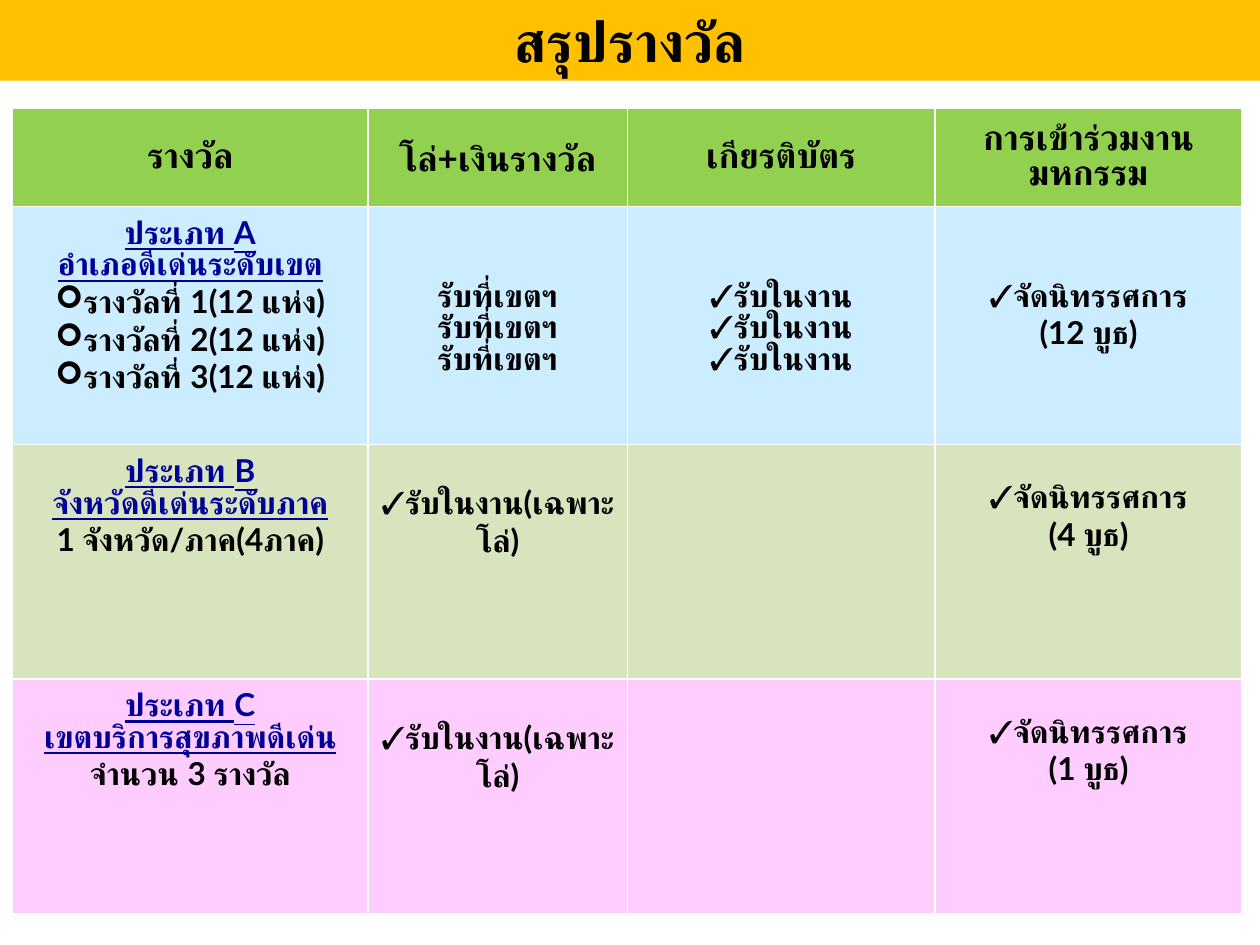
from lxml import etree
from pptx import Presentation
from pptx import util as u
from pptx.dml.color import RGBColor
from pptx.enum import text
from pptx.oxml.ns import qn

THEME = {
    "font": "Lato",
    "ink": "000000",
    "category": "000099",
    "banner": "FFC000",
    "header": "92D050",
    "title_size": 32,
    "header_size": 20,
    "body_size": 18,
}

TITLE = "สรุปรางวัล"
HEADINGS = ["รางวัล", "โล่+เงินรางวัล", "เกียรติบัตร", "การเข้าร่วมงานมหกรรม"]
EXHIBIT = "✓จัดนิทรรศการ"
TROPHY = "✓รับในงาน(เฉพาะโล่)"
AWARDS = [
    {
        "fill": "CCECFF", "drop": 0.55,
        "category": ["ประเภท A", "อำเภอดีเด่นระดับเขต"],
        "bullets": [f"รางวัลที่ {rank}(12 แห่ง)" for rank in (1, 2, 3)],
        "details": [["รับที่เขตฯ"] * 3, ["✓รับในงาน"] * 3, [EXHIBIT, "(12 บูธ)"]],
    },
    {
        "fill": "D7E4BD", "drop": 0.26,
        "category": ["ประเภท B", "จังหวัดดีเด่นระดับภาค"],
        "scope": ["1 จังหวัด/ภาค(4ภาค)"],
        "details": [[TROPHY], [], [EXHIBIT, "(4 บูธ)"]],
    },
    {
        "fill": "FFCCFF", "drop": 0.26,
        "category": ["ประเภท C", "เขตบริการสุขภาพดีเด่น"],
        "scope": ["จำนวน 3 รางวัล"],
        "details": [[TROPHY], [], [EXHIBIT, "(1 บูธ)"]],
    },
]
COLUMN_WIDTHS = [2.82, 2.06, 2.44, 2.44]
ROW_HEIGHTS = [0.78, 1.89, 1.86, 1.86]
CELL_MARGIN = 0.05
BULLET_INDENT = 0.22


def paint(part, color):
    part.fill.solid()
    part.fill.fore_color.rgb = RGBColor.from_string(color)


def add_bullet(paragraph):
    properties = paragraph._p.get_or_add_pPr()
    properties.set("marL", str(u.Inches(BULLET_INDENT)))
    properties.set("indent", str(-u.Inches(BULLET_INDENT)))
    etree.SubElement(properties, qn("a:buFont"), typeface="Wingdings")
    etree.SubElement(properties, qn("a:buChar"), char="➢")


def write(frame, lines, size, color=THEME["ink"], underline=False, bullet=False):
    for line in lines:
        last = frame.paragraphs[-1]
        paragraph = frame.add_paragraph() if last.runs else last
        paragraph.alignment = text.PP_ALIGN.CENTER
        if bullet:
            add_bullet(paragraph)
        run = paragraph.add_run()
        run.text = line
        run.font.name = THEME["font"]
        run.font.size = u.Pt(size)
        run.font.bold = True
        run.font.underline = underline
        run.font.color.rgb = RGBColor.from_string(color)


def add_banner(slide):
    banner = slide.shapes.title
    banner.left, banner.top = u.Inches(0), u.Inches(0)
    banner.width, banner.height = u.Inches(10), u.Inches(0.64)
    paint(banner, THEME["banner"])
    banner.text_frame.vertical_anchor = text.MSO_ANCHOR.MIDDLE
    write(banner.text_frame, [TITLE], THEME["title_size"])


def add_awards(slide):
    awards = slide.shapes.add_table(
        len(ROW_HEIGHTS), len(COLUMN_WIDTHS), u.Inches(0.1), u.Inches(0.86),
        u.Inches(sum(COLUMN_WIDTHS)), u.Inches(sum(ROW_HEIGHTS))).table
    for column, width in zip(awards.columns, COLUMN_WIDTHS):
        column.width = u.Inches(width)
    for row, height in zip(awards.rows, ROW_HEIGHTS):
        row.height = u.Inches(height)

    for column, heading in enumerate(HEADINGS):
        cell = awards.cell(0, column)
        paint(cell, THEME["header"])
        cell.vertical_anchor = text.MSO_ANCHOR.MIDDLE
        write(cell.text_frame, [heading], THEME["header_size"])

    size = THEME["body_size"]
    for row, award in enumerate(AWARDS, 1):
        prize = awards.cell(row, 0)
        paint(prize, award["fill"])
        write(prize.text_frame, award["category"], size, THEME["category"], underline=True)
        write(prize.text_frame, award.get("bullets", []), size, bullet=True)
        write(prize.text_frame, award.get("scope", []), size)
        for column, lines in enumerate(award["details"], 1):
            detail = awards.cell(row, column)
            paint(detail, award["fill"])
            detail.margin_top = u.Inches(CELL_MARGIN + award["drop"])
            write(detail.text_frame, lines, size)


def main():
    deck = Presentation()
    deck.slide_width, deck.slide_height = u.Inches(10), u.Inches(7.5)
    slide = deck.slides.add_slide(deck.slide_layouts[5])
    add_banner(slide)
    add_awards(slide)
    deck.save("out.pptx")


if __name__ == "__main__":
    main()
